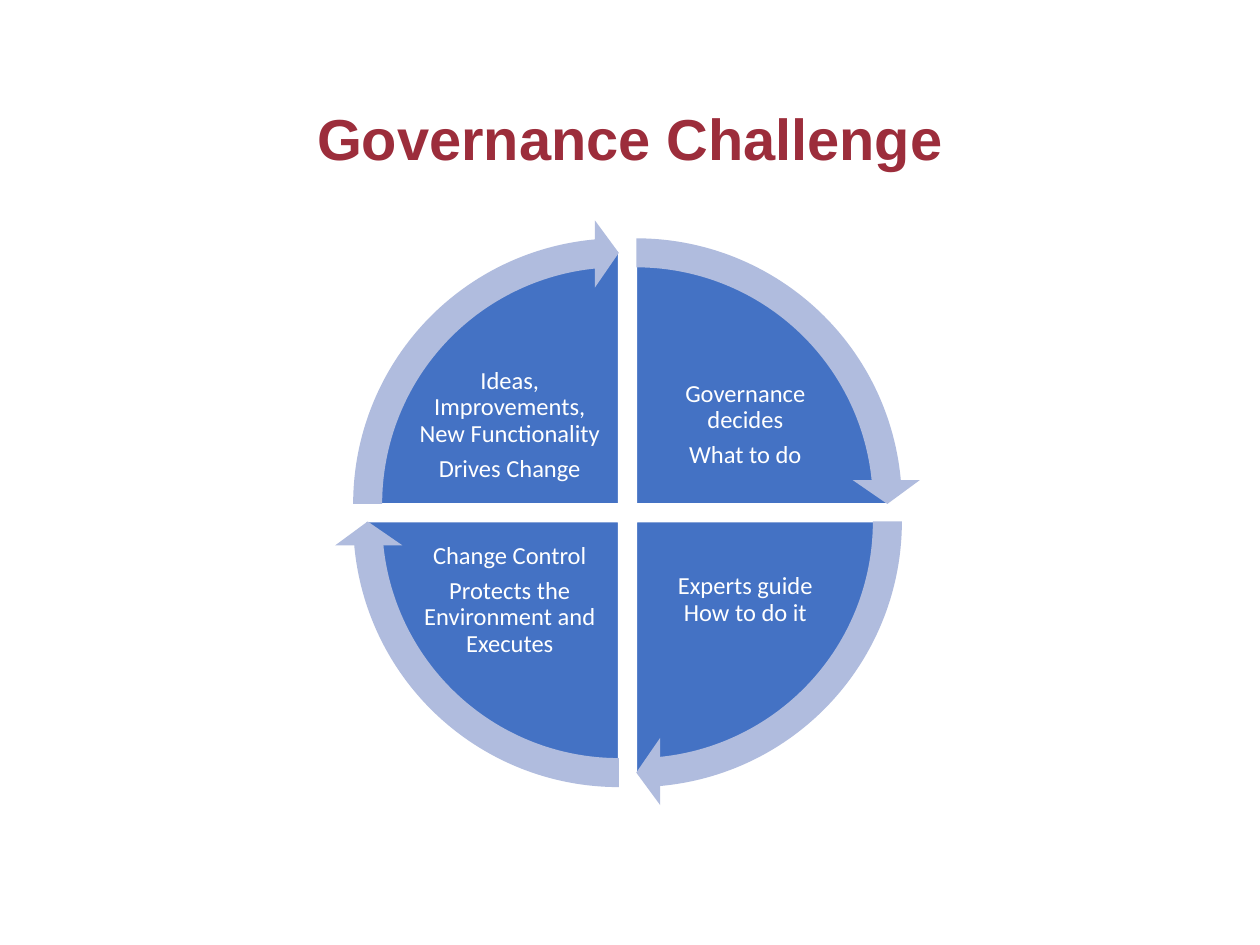
from pptx import Presentation
from pptx.dml.color import RGBColor
from pptx.enum.shapes import MSO_SHAPE as Shape
from pptx.enum.text import MSO_ANCHOR as Anchor, PP_ALIGN as Align
from pptx.util import Pt

TITLE = "Governance Challenge"
# Clockwise from the top right: horizontal side, vertical side, paragraphs
QUARTERS = [
    (1, -1, ["Governance decides", "What to do"]),
    (1, 1, ["Experts guide How to do it"]),
    (-1, 1, ["Change Control", "Protects the Environment and Executes"]),
    (-1, -1, ["Ideas, Improvements, New Functionality", "Drives Change"]),
]

THEME = {
    "title": RGBColor(0x9C, 0x2D, 0x3B),
    "pie": RGBColor(0x44, 0x72, 0xC4),
    "arrow": RGBColor(0xB0, 0xBC, 0xDE),
    "white": RGBColor(0xFF, 0xFF, 0xFF),
    "title_font": "Arial",
    "label_font": "Calibri",
    "title_size": 33,
    "label_size": 14,
}

CENTER_X, CENTER_Y = 358.6, 293
HALF_GAP = 5
PIE_SIZE, ARROW_SIZE = 289.4, 325.4
LABEL_WIDTH, LABEL_HEIGHT = 106.6, 79.2
LABEL_DX, LABEL_DY = 67.3, 50
LABEL_INSET = 1.4
ARROW_SWEEP = 84.54


def angle(degrees):
    """Convert degrees to the scale of shape adjustments."""
    return degrees % 360 * 0.6


def box_around(x, y, width, height):
    return Pt(x - width / 2), Pt(y - height / 2), Pt(width), Pt(height)


def add_round(slide, preset, x, y, size, color, adjustments):
    part = slide.shapes.add_shape(preset, *box_around(x, y, size, size))
    part.shadow.inherit = False
    for index, value in enumerate(adjustments):
        part.adjustments[index] = value
    part.fill.solid()
    part.fill.fore_color.rgb = color
    part.line.fill.background()
    return part


def add_label(slide, box, paragraphs, font, size, color, bold=False,
              inset=None, space_after=0):
    frame = slide.shapes.add_textbox(*box).text_frame
    frame.word_wrap = True
    frame.vertical_anchor = Anchor.MIDDLE
    if inset is not None:
        frame.margin_left = frame.margin_right = Pt(inset)
        frame.margin_top = frame.margin_bottom = Pt(inset)
    frame.text = "\n".join(paragraphs)
    for paragraph in frame.paragraphs:
        paragraph.alignment = Align.CENTER
        paragraph.line_spacing = 0.9
        paragraph.space_after = Pt(space_after)
        for run in paragraph.runs:
            run.font.name = font
            run.font.size = Pt(size)
            run.font.bold = bold
            run.font.color.rgb = color


def main():
    presentation = Presentation()
    presentation.slide_width, presentation.slide_height = Pt(720), Pt(540)
    slide = presentation.slides.add_slide(presentation.slide_layouts[6])

    add_label(slide, (Pt(49.7), Pt(28.8), Pt(620.6), Pt(104.4)), [TITLE],
              THEME["title_font"], THEME["title_size"], THEME["title"], bold=True)

    arrows = []
    for index, (side_x, side_y, paragraphs) in enumerate(QUARTERS):
        start = 270 + 90 * index
        x, y = CENTER_X + side_x * HALF_GAP, CENTER_Y + side_y * HALF_GAP
        pie = add_round(slide, Shape.PIE, x, y, PIE_SIZE, THEME["pie"],
                        [angle(start), angle(start + 90)])
        pie.line.color.rgb = THEME["white"]
        pie.line.width = Pt(1)
        label_box = box_around(CENTER_X + side_x * LABEL_DX,
                               CENTER_Y + side_y * LABEL_DY,
                               LABEL_WIDTH, LABEL_HEIGHT)
        add_label(slide, label_box, paragraphs, THEME["label_font"],
                  THEME["label_size"], THEME["white"],
                  inset=LABEL_INSET, space_after=4.9)
        arrows.append((x, y, start))

    for x, y, start in arrows:
        add_round(slide, Shape.CIRCULAR_ARROW, x, y, ARROW_SIZE, THEME["arrow"],
                  [0.051, 3.275, angle(start + ARROW_SWEEP), angle(start), 0.059])

    presentation.save("out.pptx")


if __name__ == "__main__":
    main()
